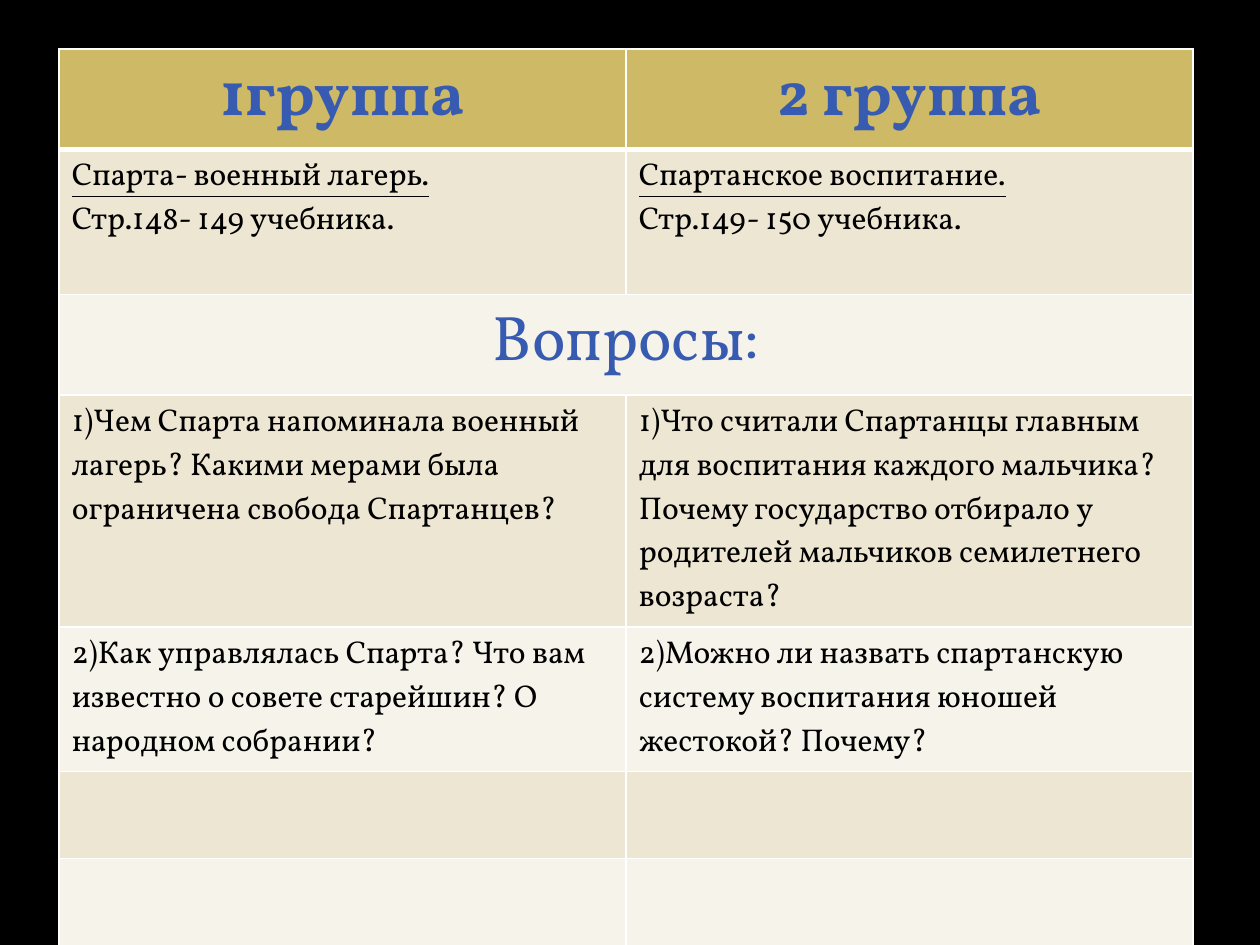
from lxml import etree
from pptx import Presentation
from pptx.dml.color import RGBColor
from pptx.enum.text import PP_ALIGN
from pptx.oxml.ns import qn
from pptx.util import Inches, Pt

CENTER, LEFT = PP_ALIGN.CENTER, PP_ALIGN.LEFT
BLACK = RGBColor(0x00, 0x00, 0x00)
WHITE = RGBColor(0xFF, 0xFF, 0xFF)
BLUE = RGBColor(0x37, 0x5B, 0xB0)
GOLD = RGBColor(0xCE, 0xB9, 0x66)
SAND = RGBColor(0xED, 0xE6, 0xD3)
CREAM = RGBColor(0xF6, 0xF3, 0xEA)
FONT = "Vollkorn"

ROWS = [
    ["1группа", "2 группа"],
    ["Спарта- военный лагерь.\nСтр.148- 149 учебника.",
     "Спартанское воспитание.\nСтр.149- 150 учебника."],
    ["Вопросы:", ""],
    ["1)Чем Спарта напоминала военный лагерь? Какими мерами была ограничена "
     "свобода Спартанцев?",
     "1)Что считали Спартанцы главным для воспитания каждого мальчика? Почему "
     "государство отбирало у родителей мальчиков семилетнего возраста?"],
    ["2)Как управлялась Спарта? Что вам известно о совете старейшин? "
     "О народном собрании?",
     "2)Можно ли назвать спартанскую систему воспитания юношей жестокой? Почему?"],
    ["", ""],
    ["", ""],
    ["", ""],
]
HEADER, TOPICS, QUESTIONS = 0, 1, 2
ROW_HEIGHT = 0.69


def set_border(cell, side, points):
    """Add a solid white border; call before the cell gets its fill."""
    line = etree.SubElement(cell._tc.get_or_add_tcPr(), qn("a:" + side), w=str(Pt(points)))
    fill = etree.SubElement(line, qn("a:solidFill"))
    etree.SubElement(fill, qn("a:srgbClr"), val=str(WHITE))


# Slide with black background
deck = Presentation()
deck.slide_width, deck.slide_height = Inches(10), Inches(7.5)
page = deck.slides.add_slide(deck.slide_layouts[6])
page.background.fill.solid()
page.background.fill.fore_color.rgb = BLACK

# Table grid
table = page.shapes.add_table(len(ROWS), 2, Inches(0.47), Inches(0.39),
                              Inches(9), Inches(ROW_HEIGHT * len(ROWS))).table
table.rows[TOPICS].height = Inches(1.15)
table.cell(QUESTIONS, 0).merge(table.cell(QUESTIONS, 1))

# Cells: text, borders and banded fills
for row, texts in enumerate(ROWS):
    is_heading = row in (HEADER, QUESTIONS)
    for column, text in enumerate(texts):
        cell = table.cell(row, column)
        for side in ("lnL", "lnR", "lnT", "lnB"):
            under_header = (row, side) in ((HEADER, "lnB"), (TOPICS, "lnT"))
            set_border(cell, side, 3 if under_header else 1)
        cell.fill.solid()
        cell.fill.fore_color.rgb = GOLD if row == HEADER else SAND if row % 2 else CREAM
        if not text:
            continue
        cell.text_frame.text = text
        for number, para in enumerate(cell.text_frame.paragraphs):
            para.alignment = CENTER if is_heading else LEFT
            font = para.runs[0].font
            font.name = FONT
            font.size = Pt(36 if is_heading else 18)
            font.bold = row == HEADER
            font.underline = row == TOPICS and number == 0
            font.color.rgb = BLUE if is_heading else BLACK

deck.save("out.pptx")
